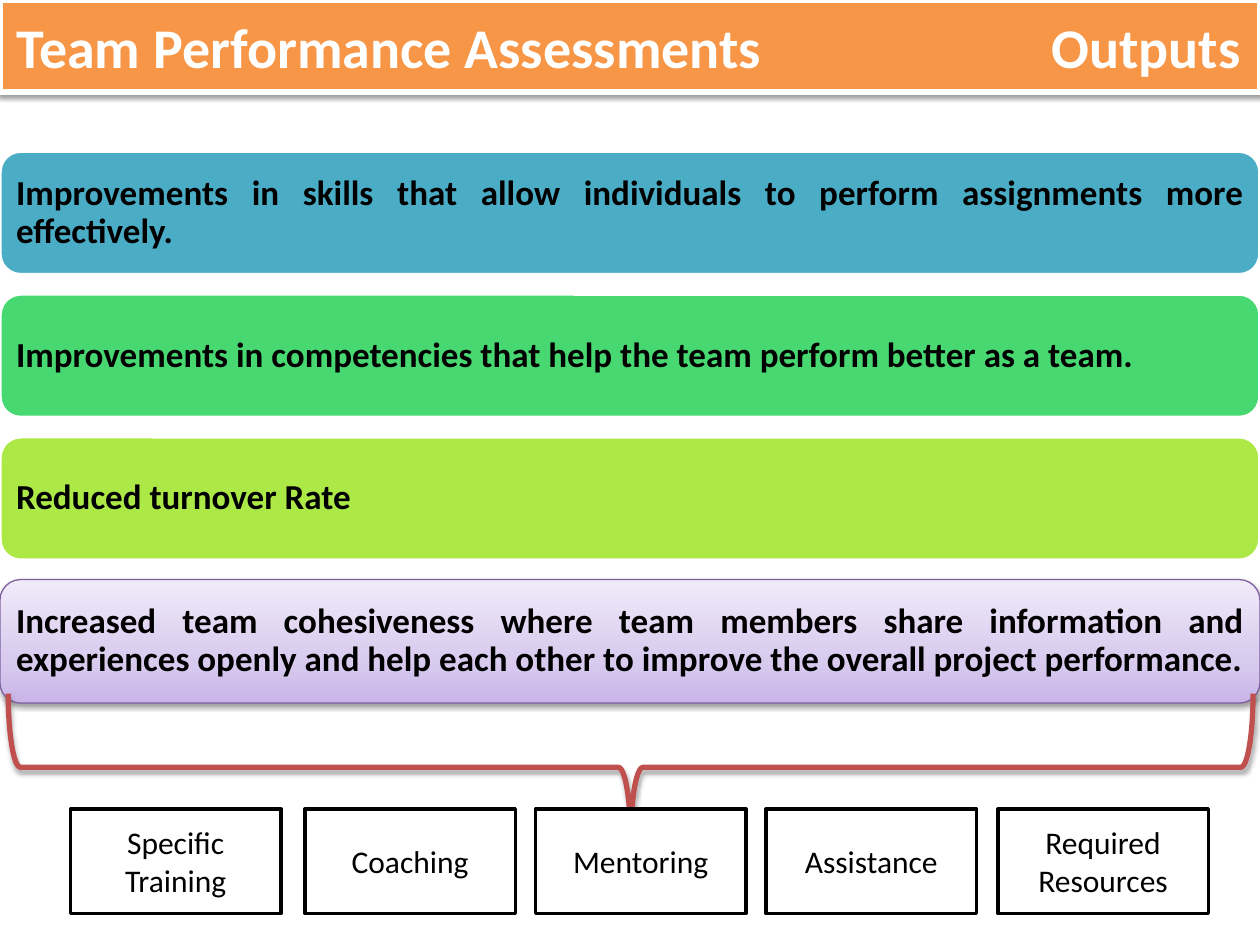
"""Build the slide on the outputs of team performance assessments."""
from copy import deepcopy
from dataclasses import dataclass
from typing import Optional

from lxml import etree
from pptx import Presentation
from pptx.dml.color import RGBColor
from pptx.enum.shapes import MSO_SHAPE
from pptx.enum.text import MSO_ANCHOR, PP_ALIGN
from pptx.oxml.ns import qn
from pptx.shapes.autoshape import Shape
from pptx.slide import Slide
from pptx.util import Inches, Pt

RECTANGLE = MSO_SHAPE.RECTANGLE
ROUNDED = MSO_SHAPE.ROUNDED_RECTANGLE
BRACE = MSO_SHAPE.RIGHT_BRACE
MIDDLE = MSO_ANCHOR.MIDDLE
LEFT, CENTER, JUSTIFY = PP_ALIGN.LEFT, PP_ALIGN.CENTER, PP_ALIGN.JUSTIFY


@dataclass(frozen=True)
class Theme:
    font: str = "Calibri"
    title_size: int = 32
    bar_size: int = 20
    box_size: int = 18
    white: str = "FFFFFF"
    black: str = "000000"
    orange: str = "F79646"
    teal: str = "4BACC6"
    green: str = "47D872"
    lime: str = "ACE946"
    purple: str = "7D60A0"
    red: str = "C0504D"
    lavender: tuple = ((0, "C9B5E8"), (0.35, "D8CBEE"), (1, "F0EAF9"))


THEME = Theme()


@dataclass(frozen=True)
class Area:
    left: float
    top: float
    width: float
    height: float


@dataclass(frozen=True)
class Bar:
    text: str
    fill: Optional[str]
    line: str = THEME.white
    line_width: float = 2


BARS = (
    Bar("Improvements in skills that allow individuals to perform assignments more effectively.", THEME.teal),
    Bar("Improvements in competencies that help the team perform better as a team.", THEME.green),
    Bar("Reduced turnover Rate", THEME.lime),
    Bar("Increased team cohesiveness where team members share information and experiences openly "
        "and help each other to improve the overall project performance.", None, THEME.purple, 0.75),
)
BOX_LEFTS = (0.56, 2.42, 4.25, 6.08, 7.92)
BOX_TEXTS = ("Specific Training", "Coaching", "Mentoring", "Assistance", "Required Resources")


def add_outlined(page: Slide, kind: MSO_SHAPE, area: Area, fill: Optional[str],
                 line: str, line_width: float) -> Shape:
    """Add a shape without a shadow, with a solid fill or none."""
    shape = page.shapes.add_shape(kind, Inches(area.left), Inches(area.top),
                                  Inches(area.width), Inches(area.height))
    shape.shadow.inherit = False
    if fill:
        shape.fill.solid()
        shape.fill.fore_color.rgb = RGBColor.from_string(fill)
    else:
        shape.fill.background()
    shape.line.color.rgb = RGBColor.from_string(line)
    shape.line.width = Pt(line_width)
    return shape


def write(shape: Shape, text: str, size: int, color: str, align: PP_ALIGN,
          bold: bool = False, margin: float = 0.1) -> None:
    """Put one formatted paragraph in a shape."""
    frame = shape.text_frame
    frame.text = text
    frame.word_wrap = True
    frame.vertical_anchor = MIDDLE
    frame.margin_left = frame.margin_right = Inches(margin)
    para = frame.paragraphs[0]
    para.alignment = align
    for span in para.runs:
        span.font.name = THEME.font
        span.font.size = Pt(size)
        span.font.bold = bold
        span.font.color.rgb = RGBColor.from_string(color)


def add_shadow(shape: Shape, opacity: int, distance: float) -> None:
    """Cast a soft shadow straight down."""
    effects = shape.element.spPr.find(qn("a:effectLst"))
    shadow = etree.SubElement(effects, qn("a:outerShdw"), blurRad=str(Pt(3.1)),
                              dist=str(Pt(distance)), dir="5400000", rotWithShape="0")
    color = etree.SubElement(shadow, qn("a:srgbClr"), val=THEME.black)
    etree.SubElement(color, qn("a:alpha"), val=str(opacity * 1000))


def fill_gradient(shape: Shape, stops: tuple) -> None:
    """Fill a shape with colour stops that run from bottom to top."""
    shape.fill.gradient()
    shape.fill.gradient_angle = 90
    stop_list = shape.element.spPr.find(".//" + qn("a:gsLst"))
    while len(stop_list) < len(stops):
        stop_list.append(deepcopy(stop_list[0]))
    for stop, (position, color) in zip(shape.fill.gradient_stops, stops):
        stop.position = position
        stop.color.rgb = RGBColor.from_string(color)


def add_title(page: Slide) -> None:
    """Add the title band, its last word set at a right tab."""
    band = add_outlined(page, RECTANGLE, Area(0, 0, 10, 0.73), THEME.orange, THEME.white, 3)
    add_shadow(band, 38, 1.6)
    write(band, "Team Performance Assessments\tOutputs", THEME.title_size,
          THEME.white, LEFT, bold=True, margin=0.13)
    properties = band.text_frame.paragraphs[0]._p.get_or_add_pPr()
    tabs = etree.SubElement(properties, qn("a:tabLst"))
    etree.SubElement(tabs, qn("a:tab"), pos=str(Inches(9.72)), algn="r")


def add_bar(page: Slide, bar: Bar, top: float) -> None:
    """Add one full-width statement."""
    shape = add_outlined(page, ROUNDED, Area(0, top, 10, 0.98), bar.fill, bar.line, bar.line_width)
    if bar.fill is None:
        fill_gradient(shape, THEME.lavender)
        add_shadow(shape, 38, 1.6)
    write(shape, bar.text, THEME.bar_size, THEME.black, JUSTIFY, bold=True, margin=0.08)
    shape.text_frame.paragraphs[0].line_spacing = 0.9


def add_brace(page: Slide) -> None:
    """Add the brace that gathers the bars over the boxes."""
    brace = add_outlined(page, BRACE, Area(4.42, 1.15, 1.17, 9.88), None, THEME.red, 3)
    brace.rotation = 90
    add_shadow(brace, 35, 1.8)


def add_box(page: Slide, text: str, left: float) -> None:
    """Add one small outlined box."""
    box = add_outlined(page, RECTANGLE, Area(left, 6.42, 1.67, 0.83), THEME.white, THEME.black, 2)
    write(box, text, THEME.box_size, THEME.black, CENTER)


def main() -> None:
    """Build and save the deck."""
    deck = Presentation()
    deck.slide_width, deck.slide_height = Inches(10), Inches(7.5)
    page = deck.slides.add_slide(deck.slide_layouts[6])
    add_title(page)
    for index, bar in enumerate(BARS):
        add_bar(page, bar, 1.2 + index * 3.4 / 3)
    add_brace(page)
    for text, left in zip(BOX_TEXTS, BOX_LEFTS):
        add_box(page, text, left)
    deck.save("out.pptx")


if __name__ == "__main__":
    main()
